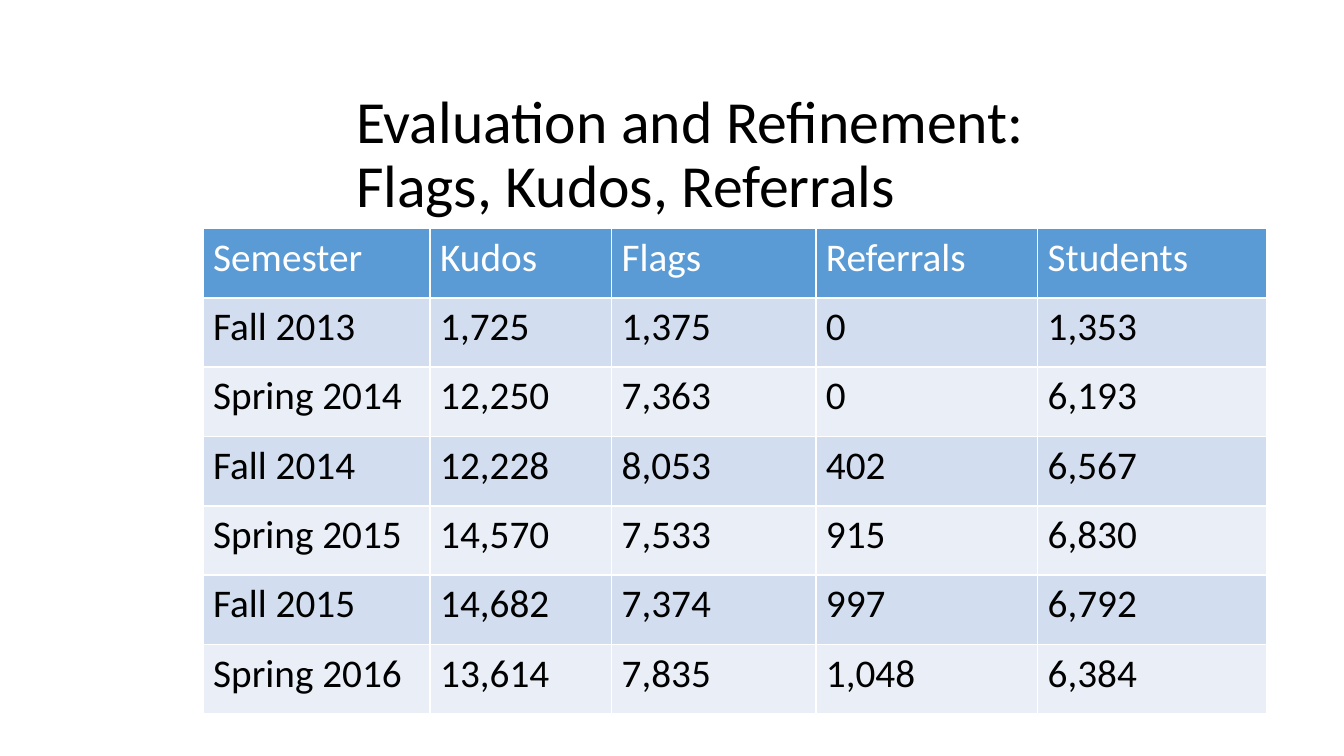
import pptx
import pptx.dml.color
import pptx.enum.text
import pptx.oxml
import pptx.oxml.ns
import pptx.util

Cm = pptx.util.Cm
Pt = pptx.util.Pt

COLORS = {
    "text": "000000",
    "header_text": "FFFFFF",
    "border": "FFFFFF",
    "header": "5B9BD5",
    "odd_row": "D2DEEF",
    "even_row": "EAEFF7",
}
FONT = "Calibri"
TITLE = "Evaluation and Refinement:\vFlags, Kudos, Referrals"
SEMESTERS = [
    ("Semester", "Kudos", "Flags", "Referrals", "Students"),
    ("Fall 2013", "1,725", "1,375", "0", "1,353"),
    ("Spring 2014", "12,250", "7,363", "0", "6,193"),
    ("Fall 2014", "12,228", "8,053", "402", "6,567"),
    ("Spring 2015", "14,570", "7,533", "915", "6,830"),
    ("Fall 2015", "14,682", "7,374", "997", "6,792"),
    ("Spring 2016", "13,614", "7,835", "1,048", "6,384"),
]
COLUMN_WIDTHS = [4.29, 3.43, 3.86, 4.19, 4.34]
ROW_HEIGHT = 1.31
CELL_FORMAT = {
    "margin_left": Cm(0.19),
    "margin_right": Cm(0.19),
    "margin_top": Cm(0.1),
    "margin_bottom": Cm(0.1),
}
TITLE_FORMAT = {
    "word_wrap": True,
    "vertical_anchor": pptx.enum.text.MSO_ANCHOR.MIDDLE,
}


def rgb(name):
    return pptx.dml.color.RGBColor.from_string(COLORS[name])


def apply_format(target, values):
    for name, value in values.items():
        setattr(target, name, value)


def style_font(paragraph, size, color):
    apply_format(paragraph.font, {"name": FONT, "size": Pt(size), "bold": False})
    paragraph.font.color.rgb = rgb(color)


def add_title(slide):
    title = slide.shapes.add_textbox(Cm(6.48), Cm(1.57), Cm(17.17), Cm(2.77)).text_frame
    apply_format(title, TITLE_FORMAT)
    heading = title.paragraphs[0]
    heading.text = TITLE
    heading.line_spacing = 0.9
    style_font(heading, 32, "text")


def add_borders(cell):
    properties = cell._tc.get_or_add_tcPr()
    for side in ("lnL", "lnR", "lnT", "lnB"):
        properties.append(pptx.oxml.parse_xml(
            f'<a:{side} {pptx.oxml.ns.nsdecls("a")} w="{Pt(1)}"><a:solidFill>'
            f'<a:srgbClr val="{COLORS["border"]}"/></a:solidFill></a:{side}>'
        ))


def fill_cell(cell, value, fill, color):
    apply_format(cell, CELL_FORMAT)
    add_borders(cell)
    cell.fill.solid()
    cell.fill.fore_color.rgb = rgb(fill)
    cell.text = value
    style_font(cell.text_frame.paragraphs[0], 21, color)


def add_semester_table(slide):
    semesters = slide.shapes.add_table(
        len(SEMESTERS), len(COLUMN_WIDTHS), Cm(3.84), Cm(4.32),
        Cm(sum(COLUMN_WIDTHS)), Cm(ROW_HEIGHT * len(SEMESTERS)),
    ).table
    for column, width in zip(semesters.columns, COLUMN_WIDTHS):
        column.width = Cm(width)
    for index, values in enumerate(SEMESTERS):
        semesters.rows[index].height = Cm(ROW_HEIGHT)
        if index == 0:
            fill, color = "header", "header_text"
        else:
            fill, color = ("odd_row" if index % 2 else "even_row"), "text"
        for cell, value in zip(semesters.rows[index].cells, values):
            fill_cell(cell, value, fill, color)


def main():
    deck = pptx.Presentation()
    deck.slide_width = Cm(25.4)
    deck.slide_height = Cm(14.29)
    slide = deck.slides.add_slide(deck.slide_layouts[6])
    add_title(slide)
    add_semester_table(slide)
    deck.save("out.pptx")


if __name__ == "__main__":
    main()
